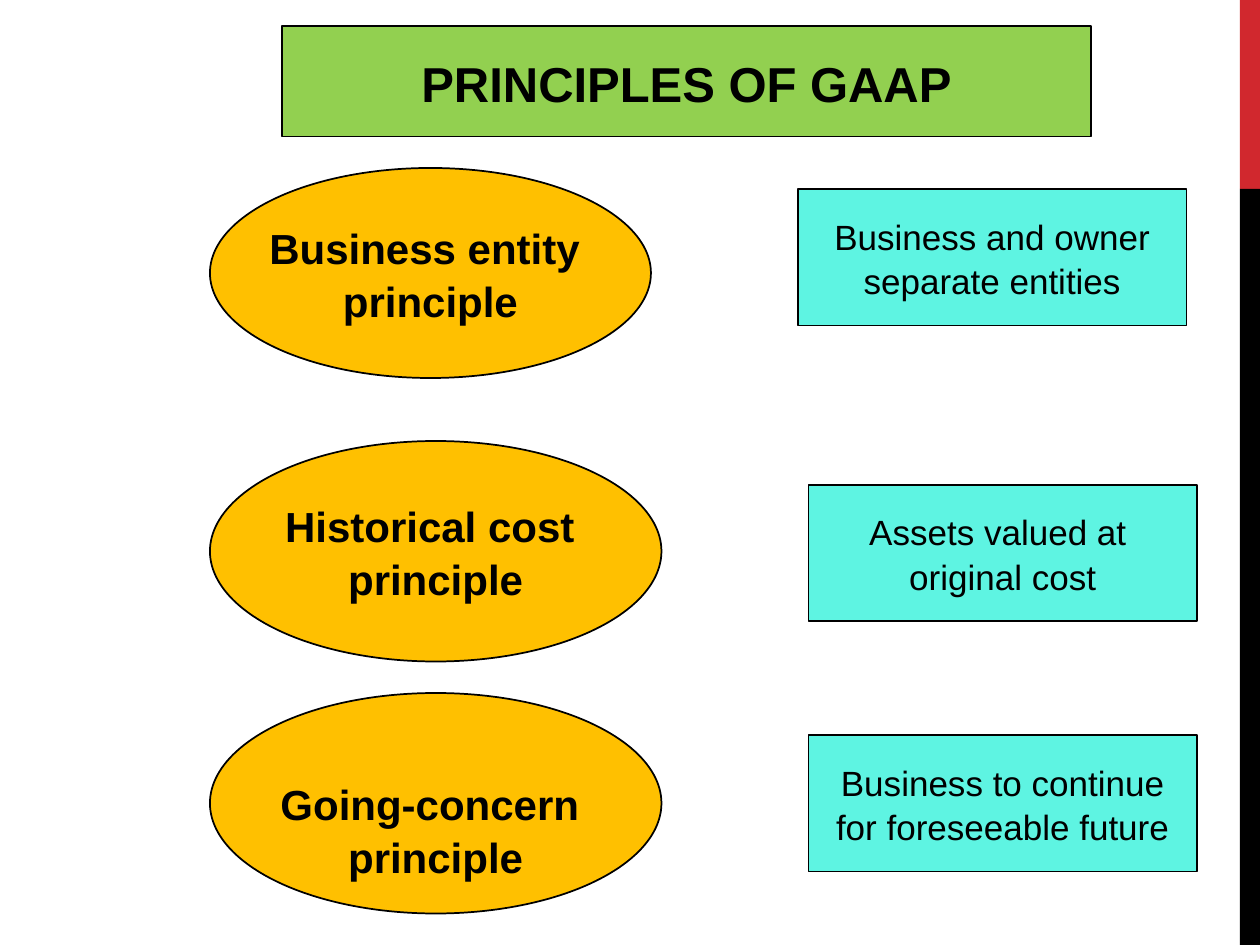
from dataclasses import dataclass

from pptx import Presentation
from pptx.dml.color import RGBColor
from pptx.enum.shapes import MSO_SHAPE as Shape
from pptx.enum.text import MSO_ANCHOR as Anchor, PP_ALIGN as Align
from pptx.util import Pt

BLACK, RED, GREEN, AMBER, AQUA = "000000", "D1282E", "92D050", "FFC000", "5EF4E2"
SLIDE_W, SLIDE_H = 720, 540
BAND_X, BAND_SPLIT = 708.5, 108
PRINCIPLE_X = 120
MEANING_W, MEANING_H = 222, 78
TITLE_FONT = {"name": "Arial", "size": Pt(28), "bold": True}
PRINCIPLE_FONT = {"name": "Arial", "size": Pt(24), "bold": True}
MEANING_FONT = {"name": "Arial", "size": Pt(20), "bold": False}


@dataclass
class Box:
    x: float
    y: float
    w: float
    h: float


@dataclass
class Principle:
    name: list[str]
    oval: Box
    meaning: list[str]
    meaning_x: float
    meaning_y: float
    drop: float = 0  # extra space above the name


PRINCIPLES = [
    Principle(["Business entity ", "principle"], Box(PRINCIPLE_X, 96, 252, 120),
              ["Business and owner", "separate entities"], 456, 108),
    Principle(["Historical cost ", "principle"], Box(PRINCIPLE_X, 252, 258, 126),
              ["Assets valued at ", "original cost"], 462, 277),
    Principle(["Going-concern ", "principle"], Box(PRINCIPLE_X, 396, 258, 126),
              ["Business to continue", "for foreseeable future"], 462, 420, 29),
]


def rgb(color: str) -> RGBColor:
    return RGBColor.from_string(color)


def place(sp, box: Box) -> None:
    sp.left, sp.top, sp.width, sp.height = map(Pt, (box.x, box.y, box.w, box.h))


def paint(sp, fill: str, outlined: bool = True) -> None:
    sp.fill.solid()
    sp.fill.fore_color.rgb = rgb(fill)
    if outlined:
        sp.line.color.rgb = rgb(BLACK)
        sp.line.width = Pt(1)
    else:
        sp.line.fill.background()


def write(sp, lines: list[str], font: dict, drop: float = 0) -> None:
    """Centre the lines, one paragraph each, lowered when drop is given."""
    tf = sp.text_frame
    tf.word_wrap = False
    tf.vertical_anchor = Anchor.MIDDLE
    if drop:
        tf.margin_top, tf.margin_bottom = Pt(drop), 0
    for i, line in enumerate(lines):
        p = tf.paragraphs[0] if i == 0 else tf.add_paragraph()
        p.alignment = Align.CENTER
        p.line_spacing = 1.05
        r = p.add_run()
        r.text = line
        r.font.color.rgb = rgb(BLACK)
        for key, value in font.items():
            setattr(r.font, key, value)


def add_box(slide, kind: Shape, box: Box, fill: str, outlined: bool = True):
    sp = slide.shapes.add_shape(kind, 0, 0, 0, 0)
    sp.shadow.inherit = False
    place(sp, box)
    paint(sp, fill, outlined)
    return sp


def add_principle(slide, item: Principle) -> None:
    meaning_box = Box(item.meaning_x, item.meaning_y, MEANING_W, MEANING_H)
    meaning = add_box(slide, Shape.RECTANGLE, meaning_box, AQUA)
    write(meaning, item.meaning, MEANING_FONT)
    oval = add_box(slide, Shape.OVAL, item.oval, AMBER)
    write(oval, item.name, PRINCIPLE_FONT, item.drop)


def main() -> None:
    prs = Presentation()
    prs.slide_width, prs.slide_height = Pt(SLIDE_W), Pt(SLIDE_H)
    slide = prs.slides.add_slide(prs.slide_layouts[5])

    band_w = SLIDE_W - BAND_X
    for y, h, color in ((0, BAND_SPLIT, RED), (BAND_SPLIT, SLIDE_H - BAND_SPLIT, BLACK)):
        add_box(slide, Shape.RECTANGLE, Box(BAND_X, y, band_w, h), color, outlined=False)

    for item in PRINCIPLES:
        add_principle(slide, item)

    title = slide.shapes.title
    place(title, Box(161.3, 15, 462, 63))
    paint(title, GREEN)
    write(title, ["PRINCIPLES OF GAAP"], TITLE_FONT)

    prs.save("out.pptx")


if __name__ == "__main__":
    main()
